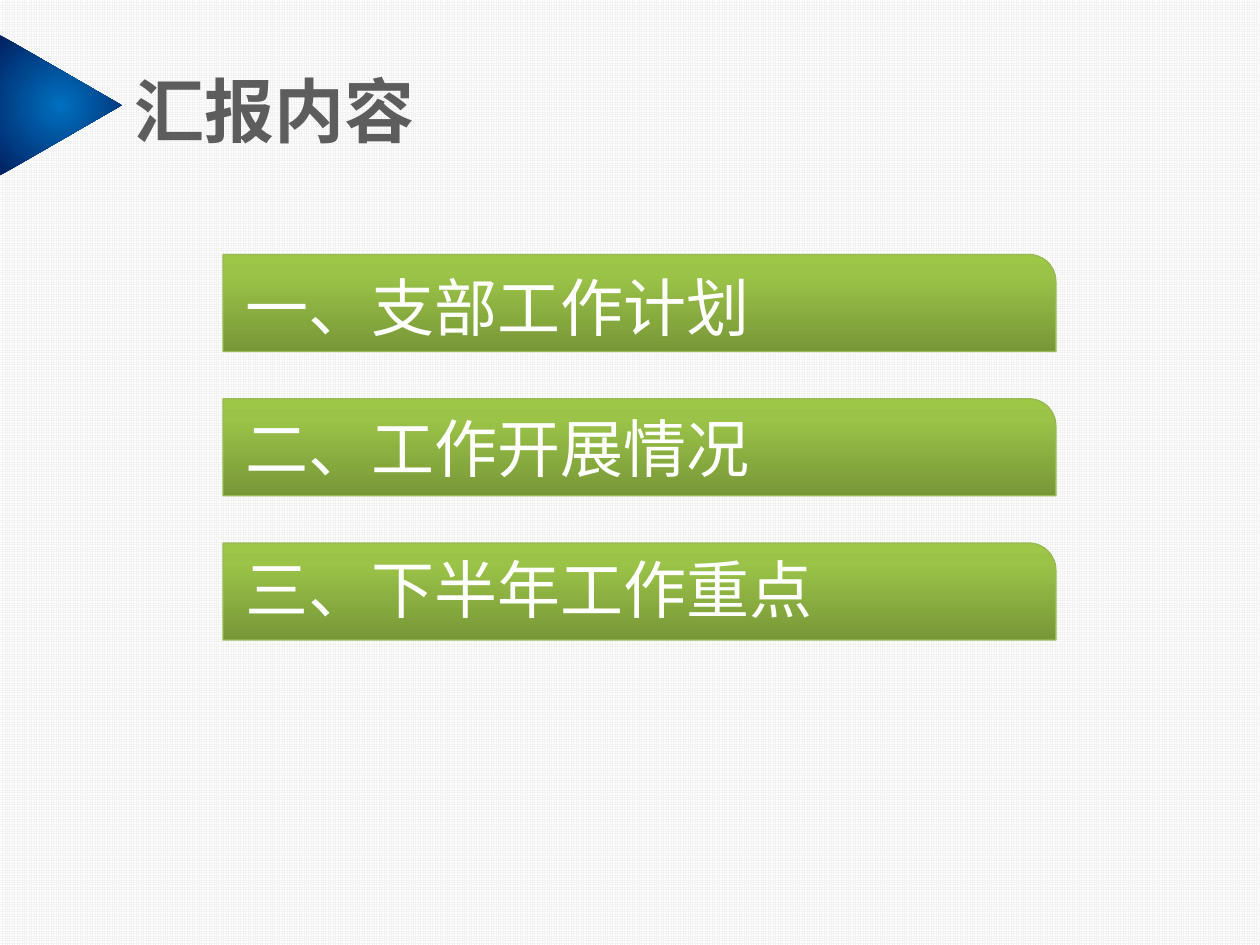
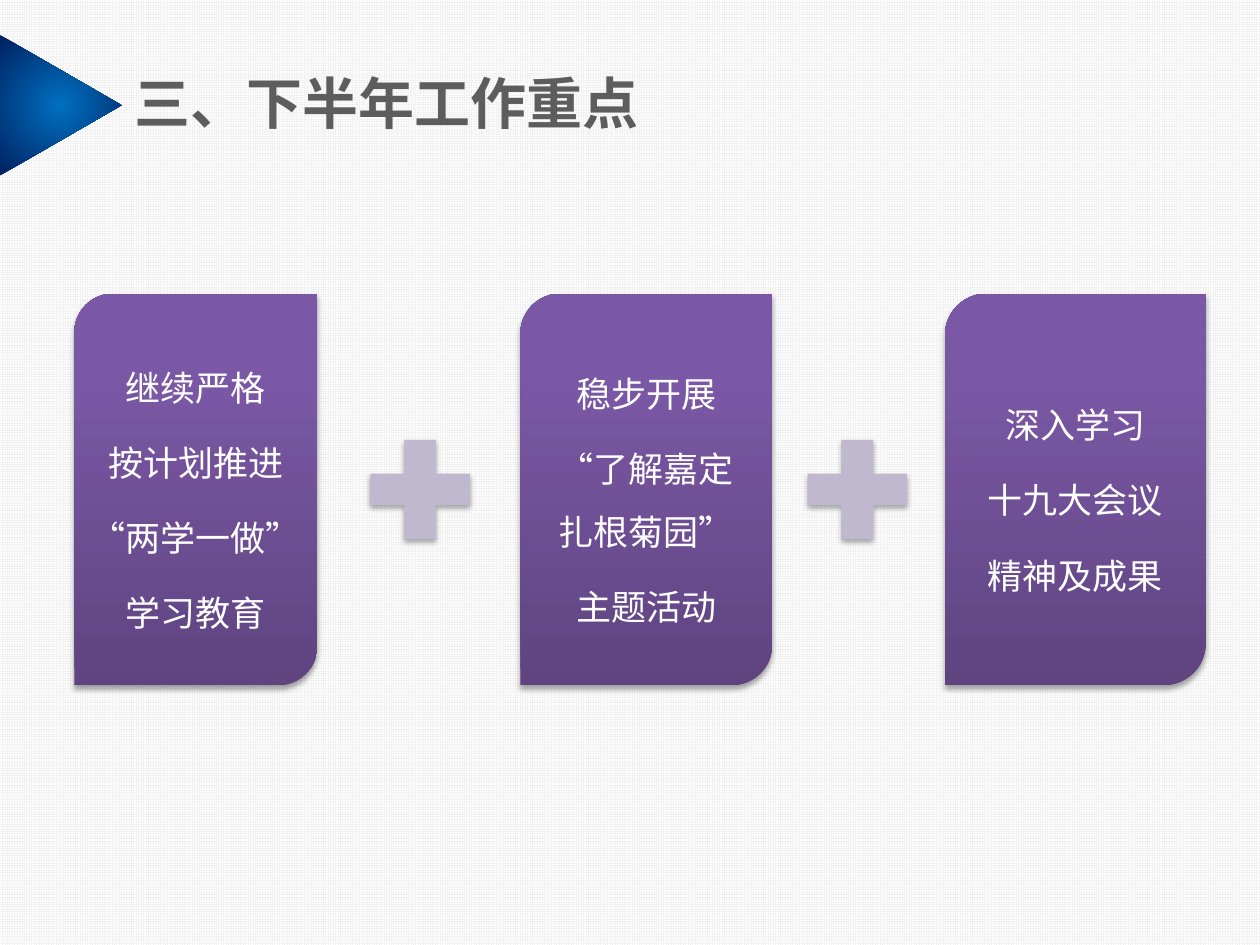
import pptx
import pptx.dml.color
import pptx.enum.dml
import pptx.enum.shapes
import pptx.enum.text
import pptx.oxml.ns
import pptx.util
from dataclasses import dataclass
from lxml import etree

SHAPE = pptx.enum.shapes.MSO_SHAPE
ALIGN = pptx.enum.text.PP_ALIGN
ANCHOR = pptx.enum.text.MSO_ANCHOR
FIT = pptx.enum.text.MSO_AUTO_SIZE
WIDTH, HEIGHT = pptx.util.Inches(10), pptx.util.Inches(7.5)
COL, ROW = WIDTH / 100, HEIGHT / 75  # grid of 100 columns by 75 rows
UP = 270


@dataclass(frozen=True)
class Theme:
    paper: str = "FFFFFF"
    mesh: str = "F2F2F2"
    title: str = "5D5D5D"
    text: str = "FFFFFF"
    edge: str = "98B955"
    plus: str = "C0B8CE"
    arrow: tuple = ((0, "0070C0"), (100, "002060"))
    green: tuple = ((0, "779737"), (80, "9BC348"), (100, "9DC746"))
    purple: tuple = ((0, "5F4480"), (80, "7B58A6"), (100, "7C57A8"))
    font: str = "Arial"
    label: str = "DejaVu Sans"
    big: int = 40
    head: int = 32
    item: int = 36
    body: int = 20


THEME = Theme()


def rgb(code):
    return pptx.dml.color.RGBColor.from_string(code)


def cells(x, y, w, h):
    """Turn columns and rows into slide lengths."""
    return round(x * COL), round(y * ROW), round(w * COL), round(h * ROW)


def node(parent, tag, **attrs):
    name = pptx.oxml.ns.qn("a:" + tag)
    return etree.SubElement(parent, name, {k: str(v) for k, v in attrs.items()})


# Fills and effects
def blend(shape, stops, angle=None):
    """Fill with a gradient: along an angle, or out from the centre."""
    shape.fill.background()
    props = shape.element.spPr
    old = props.find(pptx.oxml.ns.qn("a:noFill"))
    fill = node(props, "gradFill", rotWithShape=1)
    row = node(fill, "gsLst")
    for share, code in stops:
        node(node(row, "gs", pos=share * 1000), "srgbClr", val=code)
    if angle is None:
        ring = node(fill, "path", path="circle")
        node(ring, "fillToRect", l=50000, t=50000, r=50000, b=50000)
    else:
        node(fill, "lin", ang=angle * 60000, scaled=0)
    props.replace(old, fill)


def shade(shape):
    """Cast a soft shadow straight down."""
    list_tag = pptx.oxml.ns.qn("a:effectLst")
    cast = node(shape.element.spPr.find(list_tag), "outerShdw", blurRad=40000,
                dist=23000, dir=5400000, rotWithShape=0)
    node(node(cast, "srgbClr", val="000000"), "alpha", val=35000)


# Elements
def draw(slide, kind, box, *adjust):
    shape = slide.shapes.add_shape(kind, *cells(*box))
    shape.shadow.inherit = False
    shape.line.fill.background()
    for i, value in enumerate(adjust):
        shape.adjustments[i] = value
    return shape


def write(para, text, size, color, font, bold=False):
    run = para.add_run()
    run.text = text
    run.font.size = pptx.util.Pt(size)
    run.font.color.rgb = rgb(color)
    run.font.name = font
    run.font.bold = bold


def start(deck, text, size, top):
    """Add a slide with the blue arrow and its title."""
    slide = deck.slides.add_slide(deck.slide_layouts[5])
    arrow = draw(slide, SHAPE.ISOSCELES_TRIANGLE, (-0.8, 3.5, 11.2, 9.7))
    arrow.rotation = 90
    blend(arrow, THEME.arrow)
    title = slide.shapes.title
    title.left, title.top, title.width, title.height = cells(9.7, top, 85.3, 7.2)
    frame = title.text_frame
    frame.auto_size = FIT.NONE
    frame.vertical_anchor = ANCHOR.MIDDLE
    para = frame.paragraphs[0]
    para.alignment = ALIGN.LEFT
    write(para, text, size, THEME.title, THEME.font, True)
    return slide


def add_bar(slide, index, text):
    bar = draw(slide, SHAPE.ROUND_1_RECTANGLE,
               (17.7, 20.2 + 11.45 * index, 66.1, 7.7), 0.28)
    blend(bar, THEME.green, UP)
    bar.line.color.rgb = rgb(THEME.edge)
    bar.line.width = pptx.util.Pt(0.75)
    box = slide.shapes.add_textbox(
        *cells(18.5, 20.8 + 11.2 * index, 2 + 5.05 * len(text), 7.1))
    box.text_frame.word_wrap = False
    box.text_frame.auto_size = FIT.SHAPE_TO_FIT_TEXT
    write(box.text_frame.paragraphs[0], text, THEME.item, THEME.text, THEME.font)


def add_panel(slide, left, width, paras):
    panel = draw(slide, SHAPE.ROUND_2_DIAG_RECTANGLE,
                 (left, 23.3, width, 31.1), 0.16, 0)
    blend(panel, THEME.purple, UP)
    shade(panel)
    frame = panel.text_frame
    frame.word_wrap = True
    frame.vertical_anchor = ANCHOR.MIDDLE
    frame.margin_left = frame.margin_right = pptx.util.Inches(0.03)
    frame.margin_top = frame.margin_bottom = pptx.util.Inches(0.03)
    for i, lines in enumerate(paras):
        para = frame.add_paragraph() if i else frame.paragraphs[0]
        para.alignment = ALIGN.CENTER
        para.line_spacing = 1.5
        para.space_after = pptx.util.Pt(7)
        for j, line in enumerate(lines.split("\n")):
            if j:
                para.add_line_break()
            write(para, line, THEME.body, THEME.text, THEME.label)


def add_plus(slide, left):
    plus = draw(slide, SHAPE.CROSS, (left, 34.9, 7.9, 7.9), 0.34)
    plus.fill.solid()
    plus.fill.fore_color.rgb = rgb(THEME.plus)
    shade(plus)


def paint(master):
    """Give every slide the fine grid background."""
    fill = master.background.fill
    fill.patterned()
    fill.pattern = pptx.enum.dml.MSO_PATTERN.SMALL_GRID
    fill.fore_color.rgb = rgb(THEME.mesh)
    fill.back_color.rgb = rgb(THEME.paper)


def main():
    deck = pptx.Presentation()
    deck.slide_width, deck.slide_height = WIDTH, HEIGHT
    paint(deck.slide_master)

    # Contents
    focus = "三、下半年工作重点"
    slide = start(deck, "汇报内容", THEME.big, 5.1)
    for i, text in enumerate(("一、支部工作计划", "二、工作开展情况", focus)):
        add_bar(slide, i, text)

    # Focus of the second half year
    slide = start(deck, focus, THEME.head, 4.5)
    panels = (
        (5.9, 19.3, ("继续严格", "按计划推进", "“两学一做”", "学习教育")),
        (41.3, 20, ("稳步开展", "“了解嘉定\n扎根菊园”", "主题活动")),
        (75, 20.7, ("深入学习", "十九大会议", "精神及成果")),
    )
    for left, width, paras in panels:
        add_panel(slide, left, width, paras)
    for left in (29.4, 64.1):
        add_plus(slide, left)

    deck.save("out.pptx")


if __name__ == "__main__":
    main()
